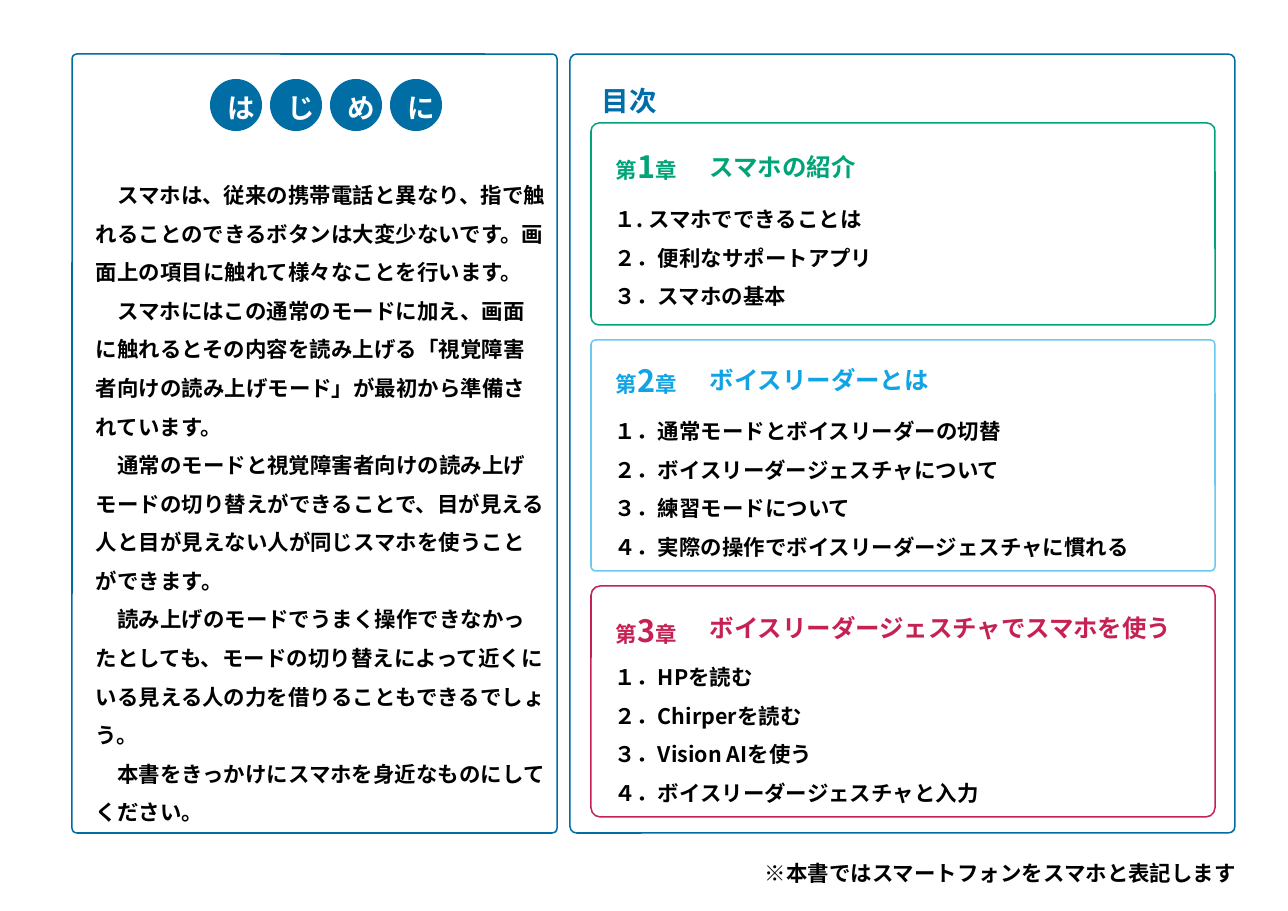
import pptx
import pptx.dml.color
import pptx.enum.shapes
import pptx.enum.text
import pptx.oxml.ns
import pptx.util

SCALE = 914400 / 110.2
WIDE, HIGH = 1288, 911
FONT = "Noto Sans CJK JP"
BLUE, BLACK, WHITE = "006DA4", "000000", "FFFFFF"

WORD = "はじめに"
INTRO = [
    "スマホは、従来の携帯電話と異なり、指で触れることのできるボタンは大変少ないです。画面上の項目に触れて様々なことを行います。",
    "スマホにはこの通常のモードに加え、画面に触れるとその内容を読み上げる「視覚障害者向けの読み上げモード」が最初から準備されています。",
    "通常のモードと視覚障害者向けの読み上げモードの切り替えができることで、目が見える人と目が見えない人が同じスマホを使うことができます。",
    "読み上げのモードでうまく操作できなかったとしても、モードの切り替えによって近くにいる見える人の力を借りることもできるでしょう。",
    "本書をきっかけにスマホを身近なものにしてください。",
]
NOTE = "※本書ではスマートフォンをスマホと表記します"

# title, line colour, text colour, corner, tops of frame, number, title and list, frame height
CHAPTERS = [
    ("スマホの紹介", "00A478", "00A478", 0.04, (123, 142, 147, 188), 202,
     ["１. スマホでできることは", "２．便利なサポートアプリ", "３．スマホの基本"]),
    ("ボイスリーダーとは", "6AC8F3", "12A3E4", 0.02, (340, 357, 360, 400), 231,
     ["１．通常モードとボイスリーダーの切替", "２．ボイスリーダージェスチャについて",
      "３．練習モードについて", "４．実際の操作でボイスリーダージェスチャに慣れる"]),
    ("ボイスリーダージェスチャでスマホを使う", "C62153", "C62153", 0.04,
     (586, 606, 608, 646), 231,
     ["１．HPを読む", "２．Chirperを読む", "３．Vision AIを使う",
      "４．ボイスリーダージェスチャと入力"]),
]

deck = pptx.Presentation()


def px(n):
    return pptx.util.Emu(round(n * SCALE))


def rgb(code):
    return pptx.dml.color.RGBColor.from_string(code)


deck.slide_width, deck.slide_height = px(WIDE), px(HIGH)
slide = deck.slides.add_slide(deck.slide_layouts[6])


def shape(kind, box, fill, line=None):
    form = slide.shapes.add_shape(kind, *map(px, box))
    form.shadow.inherit = False
    form.fill.solid()
    form.fill.fore_color.rgb = rgb(fill)
    if line:
        form.line.color.rgb = rgb(line)
        form.line.width = pptx.util.Pt(1)
    else:
        form.line.fill.background()
    return form


def panel(box, line, corner):
    form = shape(pptx.enum.shapes.MSO_SHAPE.ROUNDED_RECTANGLE, box, WHITE, line)
    form.adjustments[0] = corner


def text(box, paras, color, indent=0, **form):
    """Add a text box; each paragraph is a list of (words, size) runs."""
    frame = slide.shapes.add_textbox(*map(px, box)).text_frame
    frame.word_wrap = True
    for i, runs in enumerate(paras):
        para = frame.add_paragraph() if i else frame.paragraphs[0]
        for key, value in form.items():
            setattr(para, key, value)
        if indent:
            para._p.get_or_add_pPr().set("indent", str(pptx.util.Pt(indent)))
        for words, size in runs:
            run = para.add_run()
            run.text = words
            look = {"size": pptx.util.Pt(size), "bold": True, "name": FONT}
            for key, value in look.items():
                setattr(run.font, key, value)
            run.font.color.rgb = rgb(color)
            east = run._r.get_or_add_rPr().makeelement(
                pptx.oxml.ns.qn("a:ea"), {"typeface": FONT})
            run.font._element.append(east)


def body(box, lines, indent=0):
    text(box, [[(line, 14)] for line in lines], BLACK, indent, line_spacing=1.5)


panel((570, 54, 665, 779), BLUE, 0.01)
panel((72, 54, 485, 779), BLUE, 0.01)

for i, letter in enumerate(WORD):
    left = 210 + 60 * i
    shape(pptx.enum.shapes.MSO_SHAPE.OVAL, (left, 79, 52, 52), BLUE)
    text((left + 7, 86, 38, 44), [[(letter, 18)]], WHITE,
         alignment=pptx.enum.text.PP_ALIGN.CENTER)
body((85, 164, 472, 673), INTRO, indent=14)

text((591, 79, 305, 44), [[("目次", 18)]], "006DAB")
for number, chapter in enumerate(CHAPTERS, 1):
    title, line, color, corner, tops, height, items = chapter
    top, head, name, first = tops
    panel((591, top, 624, height), line, corner)
    text((605, head, 160, 51), [[("第", 14), (str(number), 20), ("章", 14)]], color)
    text((699, name, 515, 41), [[(title, 16)]], color)
    body((604, first, 563, top + height - first), items)

body((754, 842, WIDE - 754, 50), [NOTE])

deck.save("out.pptx")
